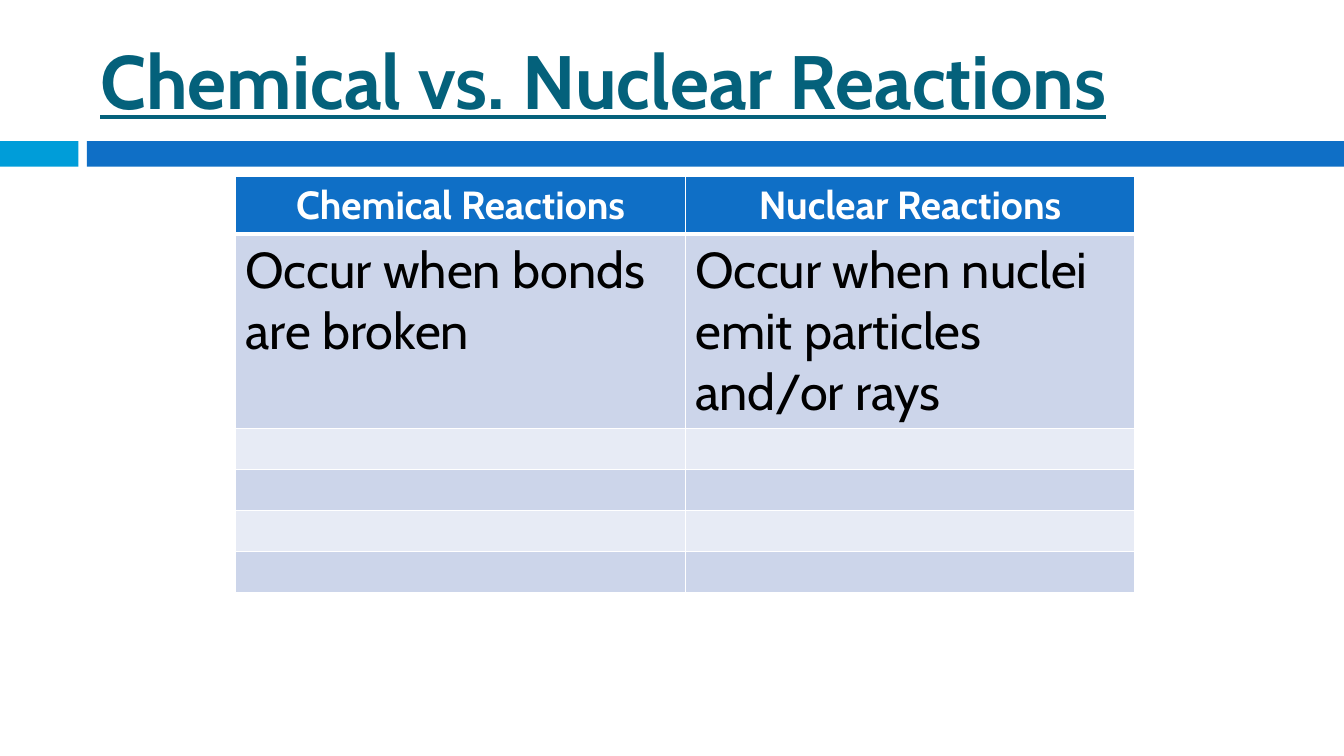
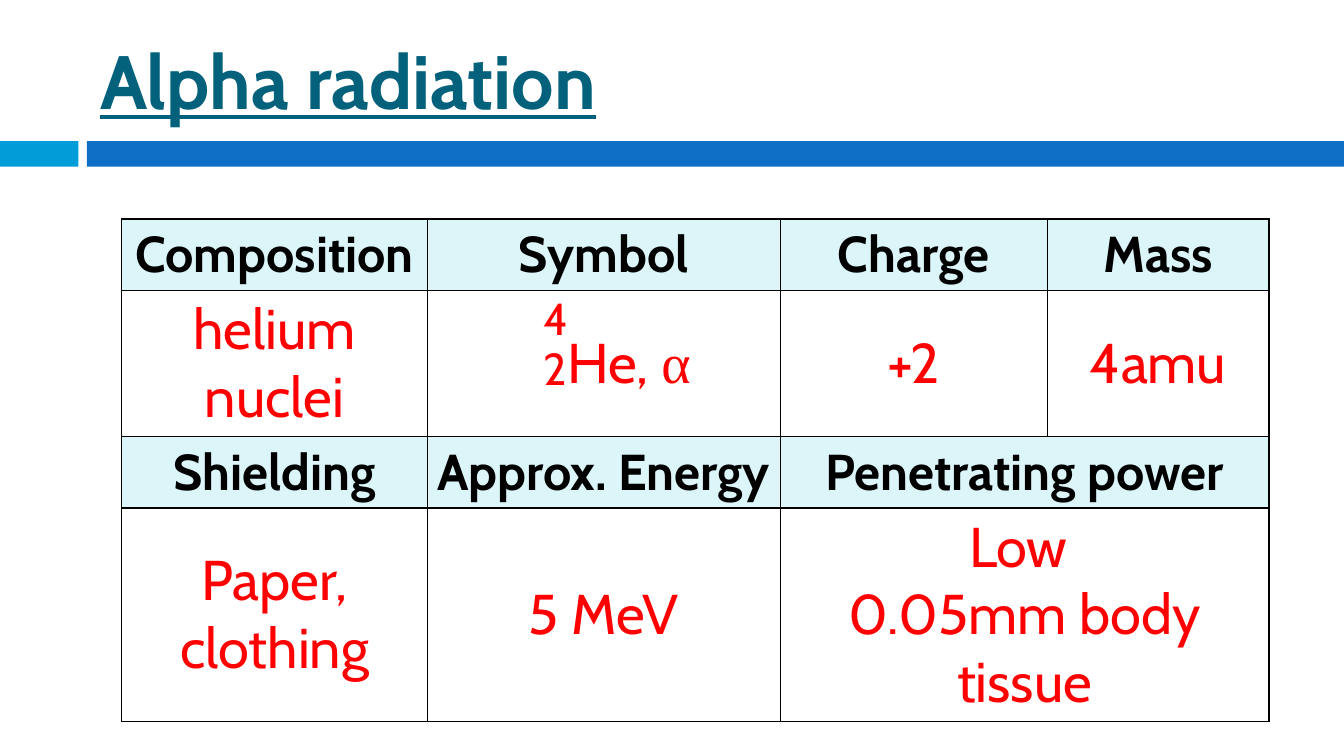
"""Build two slides on chemical versus nuclear reactions and alpha radiation."""
from dataclasses import dataclass, replace

from lxml.etree import SubElement
from pptx import Presentation
from pptx.dml.color import RGBColor
from pptx.enum.shapes import MSO_SHAPE
from pptx.enum.text import MSO_ANCHOR, MSO_AUTO_SIZE, PP_ALIGN
from pptx.oxml.ns import qn
from pptx.presentation import Presentation as Deck
from pptx.slide import Slide, SlideLayout
from pptx.table import _Cell
from pptx.text.text import _Paragraph
from pptx.util import Cm, Pt


@dataclass(frozen=True)
class Theme:
    """Colours, fonts and type sizes of the deck."""
    font: str = "Cabin"
    greek_font: str = "Times New Roman"
    title: str = "04617B"
    band: str = "0F6FC6"
    accent: str = "009DD9"
    white: str = "FFFFFF"
    black: str = "000000"
    answer: str = "FF0000"
    heading_fill: str = "DBF5F9"
    dark_stripe: str = "CCD5EA"
    light_stripe: str = "E7EBF5"
    title_size: int = 54
    answer_size: int = 40
    body_size: int = 36
    script_size: int = 32
    header_size: int = 28


THEME = Theme()


@dataclass(frozen=True)
class TextStyle:
    """Look of a run of text."""
    size: int
    color: str
    bold: bool = False
    underline: bool = False
    font: str = THEME.font


@dataclass(frozen=True)
class Band:
    """One piece of the rule under the title, in centimetres."""
    left: float
    width: float
    color: str


@dataclass(frozen=True)
class Entry:
    """Content of one table cell; Greek text follows in its own font."""
    text: str = ""
    greek: str = ""
    span: int = 1
    indent: float = 0


@dataclass(frozen=True)
class Row:
    """One table row with its look; rules are in points."""
    height: float
    fill: str
    style: TextStyle
    entries: tuple[Entry, ...]
    align: PP_ALIGN = PP_ALIGN.CENTER
    top_rule: float = 1
    bottom_rule: float = 1


@dataclass(frozen=True)
class Grid:
    """A table, in centimetres."""
    left: float
    top: float
    columns: tuple[float, ...]
    rows: tuple[Row, ...]
    rule: str
    anchor: MSO_ANCHOR
    margin: float


@dataclass(frozen=True)
class Script:
    """A small number set before the symbol of the nucleus."""
    text: str
    top: float


TITLE = TextStyle(THEME.title_size, THEME.title, bold=True, underline=True)
HEADER = TextStyle(THEME.header_size, THEME.white, bold=True)
BODY = TextStyle(THEME.body_size, THEME.black)
HEADING = replace(BODY, bold=True)
ANSWER = TextStyle(THEME.answer_size, THEME.answer)
SCRIPT = TextStyle(THEME.script_size, THEME.answer)

BANDS = (Band(0, 1.98, THEME.accent), Band(2.19, 31.68, THEME.band))
STRIPES = (THEME.light_stripe, THEME.dark_stripe) * 2

REACTIONS = Grid(
    5.94, 4.45, (11.33, 11.33),
    (
        Row(1.42, THEME.band, HEADER,
            (Entry("Chemical Reactions"), Entry("Nuclear Reactions")), bottom_rule=3),
        Row(4.9, THEME.dark_stripe, BODY,
            (Entry("Occur when bonds are broken"),
             Entry("Occur when nuclei emit particles and/or rays")),
            PP_ALIGN.LEFT, top_rule=3),
        *(Row(1.03, stripe, BODY, (Entry(), Entry())) for stripe in STRIPES),
    ),
    THEME.white, MSO_ANCHOR.TOP, 0.25)

ALPHA = Grid(
    3.07, 5.52, (7.7, 8.89, 6.73, 5.59),
    (
        Row(1.78, THEME.heading_fill, HEADING,
            (Entry("Composition"), Entry("Symbol"), Entry("Charge"), Entry("Mass"))),
        Row(3.68, THEME.white, ANSWER,
            (Entry("helium nuclei"), Entry("He, ", greek="α", indent=1.27),
             Entry("+2"), Entry("4amu"))),
        Row(1.78, THEME.heading_fill, HEADING,
            (Entry("Shielding"), Entry("Approx. Energy"),
             Entry("Penetrating power", span=2))),
        Row(5.38, THEME.white, ANSWER,
            (Entry("Paper, clothing"), Entry("5 MeV"),
             Entry("Low \n0.05mm body tissue", span=2))),
    ),
    THEME.black, MSO_ANCHOR.MIDDLE, 0.2)

SCRIPTS = (Script("4", 7.21), Script("2", 8.46))


def add_text(paragraph: _Paragraph, text: str, style: TextStyle) -> None:
    """Add styled runs, with a line break at each newline."""
    for number, line in enumerate(text.split("\n")):
        if number:
            paragraph.add_line_break()
        run = paragraph.add_run()
        run.text = line
        run.font.name = style.font
        run.font.size = Pt(style.size)
        run.font.bold = style.bold
        run.font.underline = style.underline
        run.font.color.rgb = RGBColor.from_string(style.color)


def set_rules(cell: _Cell, color: str, top: float, bottom: float) -> None:
    """Draw the four borders of a cell."""
    properties = cell._tc.get_or_add_tcPr()
    sides = (("lnL", 1), ("lnR", 1), ("lnT", top), ("lnB", bottom))
    for position, (side, width) in enumerate(sides):
        line = SubElement(properties, qn(f"a:{side}"), w=str(Pt(width)))
        SubElement(SubElement(line, qn("a:solidFill")), qn("a:srgbClr"), val=color)
        properties.insert(position, line)


def fill_cell(cell: _Cell, entry: Entry, row: Row, grid: Grid) -> None:
    """Write one entry into its cell."""
    cell.vertical_anchor = grid.anchor
    cell.margin_left = Cm(grid.margin + entry.indent)
    cell.margin_right = Cm(grid.margin)
    paragraph = cell.text_frame.paragraphs[0]
    paragraph.alignment = row.align
    if entry.text:
        add_text(paragraph, entry.text, row.style)
    if entry.greek:
        add_text(paragraph, entry.greek, replace(row.style, font=THEME.greek_font))


def add_grid(slide: Slide, grid: Grid) -> None:
    """Draw a table with its fills, rules and merged cells."""
    table = slide.shapes.add_table(
        len(grid.rows), len(grid.columns), Cm(grid.left), Cm(grid.top),
        Cm(sum(grid.columns)), Cm(sum(row.height for row in grid.rows))).table
    table.horz_banding = False
    table.first_row = False
    for column, width in zip(table.columns, grid.columns):
        column.width = Cm(width)
    for index, row in enumerate(grid.rows):
        table.rows[index].height = Cm(row.height)
        for column in range(len(grid.columns)):
            cell = table.cell(index, column)
            cell.fill.solid()
            cell.fill.fore_color.rgb = RGBColor.from_string(row.fill)
            set_rules(cell, grid.rule, row.top_rule, row.bottom_rule)
        start = 0
        for entry in row.entries:
            cell = table.cell(index, start)
            if entry.span > 1:
                cell.merge(table.cell(index, start + entry.span - 1))
            fill_cell(cell, entry, row, grid)
            start += entry.span


def add_scripts(slide: Slide) -> None:
    """Set the mass and atomic numbers before the symbol."""
    for script in SCRIPTS:
        frame = slide.shapes.add_textbox(
            Cm(13.44), Cm(script.top), Cm(0.85), Cm(1.63)).text_frame
        frame.word_wrap = True
        frame.margin_right = 0
        add_text(frame.paragraphs[0], script.text, SCRIPT)


def add_bands(slide: Slide, layout: SlideLayout) -> None:
    """Draw the bands and hand them to the layout that all slides share."""
    for band in BANDS:
        shape = slide.shapes.add_shape(
            MSO_SHAPE.RECTANGLE, Cm(band.left), Cm(3.56), Cm(band.width), Cm(0.64))
        shape.shadow.inherit = False
        shape.fill.solid()
        shape.fill.fore_color.rgb = RGBColor.from_string(band.color)
        shape.line.fill.background()
        layout.shapes.element.append(shape.element)


def add_slide(deck: Deck, layout: SlideLayout, heading: str) -> Slide:
    """Add a slide with its formatted title."""
    slide = deck.slides.add_slide(layout)
    title = slide.shapes.title
    title.left, title.top, title.width, title.height = Cm(2.27), Cm(0.62), Cm(30.2), Cm(2.74)
    frame = title.text_frame
    frame.auto_size = MSO_AUTO_SIZE.NONE
    frame.vertical_anchor = MSO_ANCHOR.MIDDLE
    paragraph = frame.paragraphs[0]
    paragraph.alignment = PP_ALIGN.LEFT
    add_text(paragraph, heading, TITLE)
    return slide


def main() -> None:
    """Build and save the deck."""
    deck = Presentation()
    deck.slide_width, deck.slide_height = Cm(33.87), Cm(19.05)
    layout = deck.slide_layouts[5]
    reactions = add_slide(deck, layout, "Chemical vs. Nuclear Reactions")
    add_bands(reactions, layout)
    add_grid(reactions, REACTIONS)
    alpha = add_slide(deck, layout, "Alpha radiation")
    add_grid(alpha, ALPHA)
    add_scripts(alpha)
    deck.save("out.pptx")


if __name__ == "__main__":
    main()
